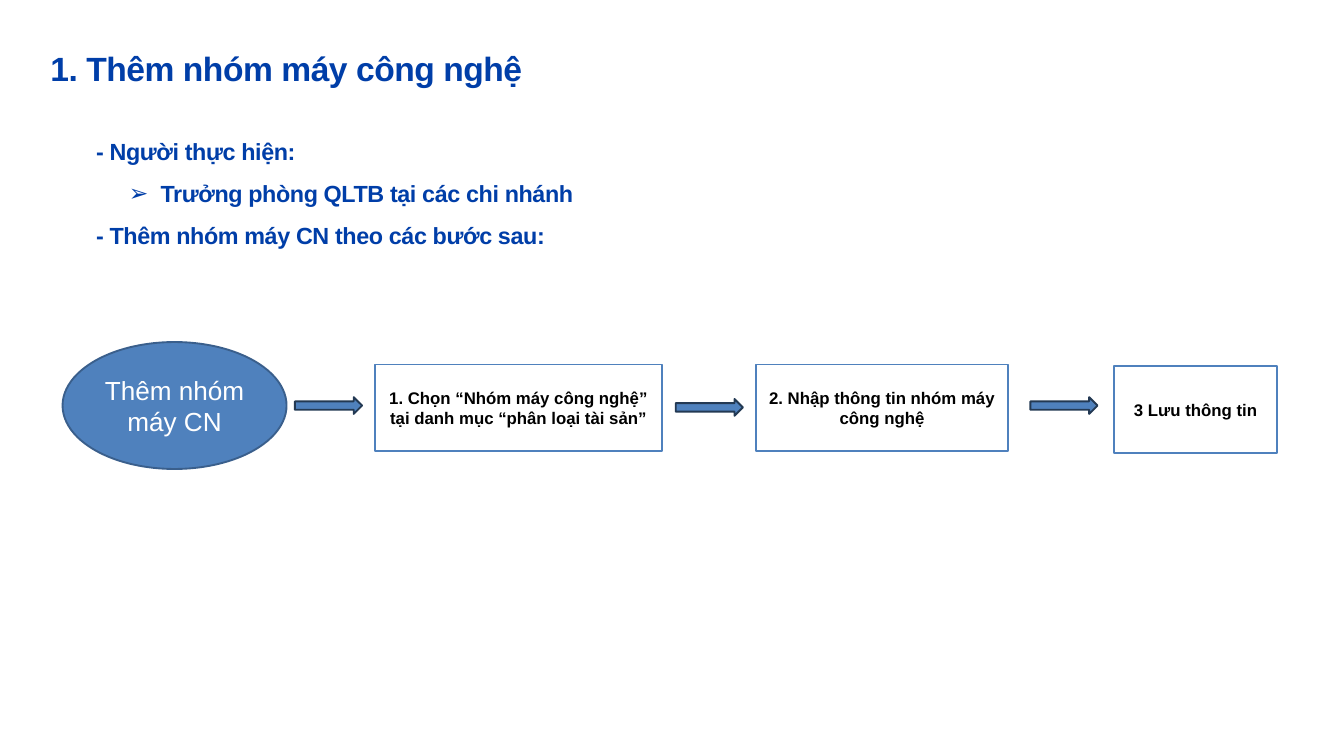
from lxml.etree import SubElement
from pptx import Presentation
from pptx.dml.color import RGBColor
from pptx.enum.shapes import MSO_SHAPE
from pptx.enum.text import MSO_ANCHOR, MSO_AUTO_SIZE, PP_ALIGN
from pptx.oxml.ns import qn
from pptx.util import Pt

COLORS = {
    "heading": "003EA8",
    "fill": "4F81BD",
    "start_line": "3A5F8C",
    "arrow_line": "233953",
    "white": "FFFFFF",
    "black": "000000",
}


def rgb(name):
    return RGBColor.from_string(COLORS[name])


def write(paragraph, text, size=18, color="black", bold=False, align=PP_ALIGN.LEFT,
          line_spacing=None, tracking=None):
    run = paragraph.add_run()
    run.text = text
    run.font.name = "Arial"
    run.font.size = Pt(size)
    run.font.bold = bold
    run.font.color.rgb = rgb(color)
    paragraph.alignment = align
    paragraph.space_before = Pt(0)
    if line_spacing is not None:
        paragraph.line_spacing = line_spacing
    if tracking is not None:
        run.font._element.set("spc", str(round(tracking * 100)))


def set_bullet(paragraph, margin=0, hanging=0, char=None):
    properties = paragraph._p.get_or_add_pPr()
    properties.set("marL", str(Pt(margin)))
    properties.set("indent", str(-Pt(hanging)))
    if char:
        SubElement(properties, qn("a:buChar")).set("char", char)
    else:
        SubElement(properties, qn("a:buNone"))


def place(placeholder, left, top, width, height):
    placeholder.left, placeholder.top = Pt(left), Pt(top)
    placeholder.width, placeholder.height = Pt(width), Pt(height)
    frame = placeholder.text_frame
    frame.margin_left = frame.margin_right = frame.margin_top = frame.margin_bottom = 0
    frame.word_wrap = True
    frame.auto_size = MSO_AUTO_SIZE.NONE
    frame.vertical_anchor = MSO_ANCHOR.TOP
    return frame


def add_heading(slide, left, top, width, height):
    frame = place(slide.shapes.title, left, top, width, height)
    write(frame.paragraphs[0], "1. Thêm nhóm máy công nghệ", size=36, color="heading",
          bold=True, line_spacing=Pt(43.5), tracking=-0.5)


def add_instructions(slide, left, top, width, height):
    frame = place(slide.placeholders[1], left, top, width, height)
    instructions = [
        ("- Người thực hiện:", 0),
        ("Trưởng phòng QLTB tại các chi nhánh", 1),
        ("- Thêm nhóm máy CN theo các bước sau:", 0),
    ]
    for index, (text, level) in enumerate(instructions):
        paragraph = frame.add_paragraph() if index else frame.paragraphs[0]
        paragraph.level = level
        write(paragraph, text, size=25, color="heading", bold=True,
              line_spacing=1.5, tracking=-0.4)
        if level:
            set_bullet(paragraph, margin=69, hanging=34, char="➢")
        else:
            set_bullet(paragraph)


def add_node(slide, kind, left, top, width, height, fill, line, text=None, **text_format):
    node = slide.shapes.add_shape(kind, Pt(left), Pt(top), Pt(width), Pt(height))
    node.shadow.inherit = False
    node.fill.solid()
    node.fill.fore_color.rgb = rgb(fill)
    node.line.color.rgb = rgb(line)
    node.line.width = Pt(2)
    if text:
        frame = node.text_frame
        frame.word_wrap = True
        frame.vertical_anchor = MSO_ANCHOR.MIDDLE
        write(frame.paragraphs[0], text, align=PP_ALIGN.CENTER, **text_format)


def add_flow(slide, left, top, width, height):
    add_node(slide, MSO_SHAPE.OVAL, left, top, 240, height, "fill", "start_line",
             "Thêm nhóm máy CN", size=28, color="white")
    steps = [
        ("1. Chọn “Nhóm máy công nghệ” tại danh mục “phân loại tài sản”", 335, 24, 307),
        ("2. Nhập thông tin nhóm máy công nghệ", 743, 24, 270),
        ("3 Lưu thông tin", width - 174, 26, 174),
    ]
    for text, step_left, step_top, step_width in steps:
        add_node(slide, MSO_SHAPE.RECTANGLE, left + step_left, top + step_top, step_width, 93,
                 "white", "fill", text, bold=True)
    for arrow_left, arrow_top in [(249, 59), (657, 61), (1037, 59)]:
        add_node(slide, MSO_SHAPE.RIGHT_ARROW, left + arrow_left, top + arrow_top, 72, 18,
                 "fill", "arrow_line")


def main():
    presentation = Presentation()
    presentation.slide_width, presentation.slide_height = Pt(1440), Pt(810)
    slide = presentation.slides.add_slide(presentation.slide_layouts[1])
    slide.background.fill.solid()
    slide.background.fill.fore_color.rgb = rgb("white")
    add_heading(slide, 54, 51, 711, 42)
    add_instructions(slide, 103, 132, 678, 176)
    add_flow(slide, 67, 366.5, 1301, 136)
    presentation.save("out.pptx")


if __name__ == "__main__":
    main()
